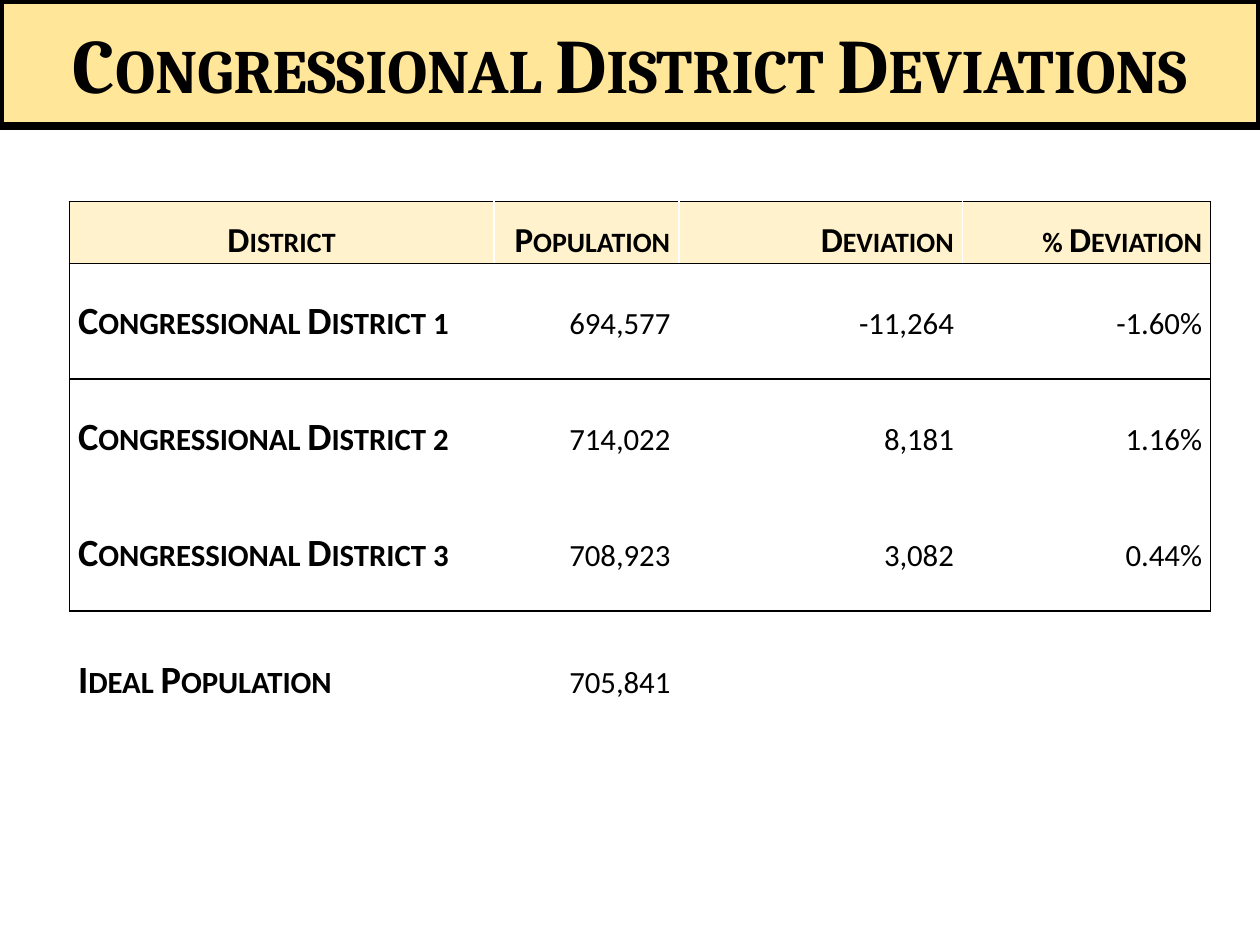
from dataclasses import dataclass

from lxml import etree
from pptx import Presentation
from pptx.dml.color import RGBColor
from pptx.enum.shapes import MSO_SHAPE
from pptx.enum.text import MSO_ANCHOR, PP_ALIGN
from pptx.oxml.ns import qn
from pptx.util import Inches, Pt

RECTANGLE = MSO_SHAPE.RECTANGLE
MIDDLE, BOTTOM = MSO_ANCHOR.MIDDLE, MSO_ANCHOR.BOTTOM
LEFT, CENTER, RIGHT = PP_ALIGN.LEFT, PP_ALIGN.CENTER, PP_ALIGN.RIGHT
PLAIN_TABLE_STYLE = "{2D5ABB26-0587-4C30-8999-92F81FD0307C}"


@dataclass(frozen=True)
class Theme:
    ink: str = "000000"
    paper: str = "FFFFFF"
    banner: str = "FFE699"
    header: str = "FFF2CC"
    title_font: str = "Cambria"
    body_font: str = "Calibri"
    title_size: int = 44
    header_size: int = 20
    body_size: int = 22
    banner_line: float = 4.5
    border_line: int = 1


HEADINGS = ["District", "Population", "Deviation", "% Deviation"]
DISTRICTS = [
    ["Congressional District 1", "694,577", "-11,264", "-1.60%"],
    ["Congressional District 2", "714,022", "8,181", "1.16%"],
    ["Congressional District 3", "708,923", "3,082", "0.44%"],
]
IDEAL = ["Ideal Population", "705,841", "", ""]
COLUMN_WIDTHS = [3.37, 1.47, 2.25, 1.97]
ROW_HEIGHTS = [0.49] + [0.92] * len(DISTRICTS) + [0.75]


class SlideBuilder:
    def __init__(self, slide, theme):
        self.slide = slide
        self.theme = theme

    def add_text(self, para, text, align, font, size, bold):
        """Put one small-caps span into a paragraph."""
        para.alignment = align
        span = para.add_run()
        span.text = text
        formats = {"name": font, "size": Pt(size), "bold": bold}
        for name, value in formats.items():
            setattr(span.font, name, value)
        span.font.color.rgb = RGBColor.from_string(self.theme.ink)
        span._r.get_or_add_rPr().set("cap", "small")

    def banner(self, text, left, top, width, height):
        theme = self.theme
        box = self.slide.shapes.add_shape(
            RECTANGLE, Inches(left), Inches(top), Inches(width), Inches(height))
        box.shadow.inherit = False
        box.fill.solid()
        box.fill.fore_color.rgb = RGBColor.from_string(theme.banner)
        box.line.color.rgb = RGBColor.from_string(theme.ink)
        box.line.width = Pt(theme.banner_line)
        frame = box.text_frame
        frame.word_wrap = True
        frame.vertical_anchor = MIDDLE
        self.add_text(frame.paragraphs[0], text, CENTER,
                      theme.title_font, theme.title_size, True)

    def borders(self, cell, colors):
        """Draw the given sides; the schema wants the order L, R, T, B."""
        properties = cell._tc.get_or_add_tcPr()
        for side in "LRTB":
            if colors.get(side):
                line = etree.SubElement(properties, qn("a:ln" + side),
                                        w=str(Pt(self.theme.border_line)))
                fill = etree.SubElement(line, qn("a:solidFill"))
                etree.SubElement(fill, qn("a:srgbClr"), val=colors[side])

    def cell_borders(self, row, column):
        """Frame the header and districts, with light dividers in the header."""
        ink, last_row = self.theme.ink, len(DISTRICTS) + 1
        ruled = {0, 1, last_row}
        divider = self.theme.paper if row == 0 else None
        colors = {"T": ink if row in ruled else None,
                  "B": ink if row + 1 in ruled else None}
        if row < last_row:
            colors["L"] = ink if column == 0 else divider
            colors["R"] = ink if column == len(HEADINGS) - 1 else divider
        return colors

    def table(self, rows, left, top):
        frame = self.slide.shapes.add_table(
            len(rows), len(HEADINGS), Inches(left), Inches(top),
            Inches(sum(COLUMN_WIDTHS)), Inches(sum(ROW_HEIGHTS)))
        table = frame.table
        table.horz_banding = False
        table._tbl.tblPr.find(qn("a:tableStyleId")).text = PLAIN_TABLE_STYLE
        for column, width in zip(table.columns, COLUMN_WIDTHS):
            column.width = Inches(width)
        for row, height in zip(table.rows, ROW_HEIGHTS):
            row.height = Inches(height)
        for row, values in enumerate(rows):
            for column, text in enumerate(values):
                self.cell(table.cell(row, column), text, row, column)

    def cell(self, cell, text, row, column):
        theme = self.theme
        is_header = row == 0
        formats = {
            "margin_left": Inches(0.07), "margin_right": Inches(0.07),
            "margin_top": Inches(0.01), "margin_bottom": Inches(0.01),
            "vertical_anchor": MIDDLE if 0 < row <= len(DISTRICTS) else BOTTOM,
        }
        for name, value in formats.items():
            setattr(cell, name, value)
        self.borders(cell, self.cell_borders(row, column))
        if is_header:
            cell.fill.solid()
            cell.fill.fore_color.rgb = RGBColor.from_string(theme.header)
        else:
            cell.fill.background()
        if text:
            first_align = CENTER if is_header else LEFT
            self.add_text(cell.text_frame.paragraphs[0], text,
                          first_align if column == 0 else RIGHT, theme.body_font,
                          theme.header_size if is_header else theme.body_size,
                          is_header or column == 0)


def main():
    deck = Presentation()
    deck.slide_width, deck.slide_height = Inches(10), Inches(7.5)
    page = SlideBuilder(deck.slides.add_slide(deck.slide_layouts[6]), Theme())

    # Title banner
    page.banner("Congressional District Deviations", 0, 0, 10, 1)

    # Deviation table
    page.table([HEADINGS, *DISTRICTS, IDEAL], 0.55, 1.6)

    deck.save("out.pptx")


if __name__ == "__main__":
    main()
